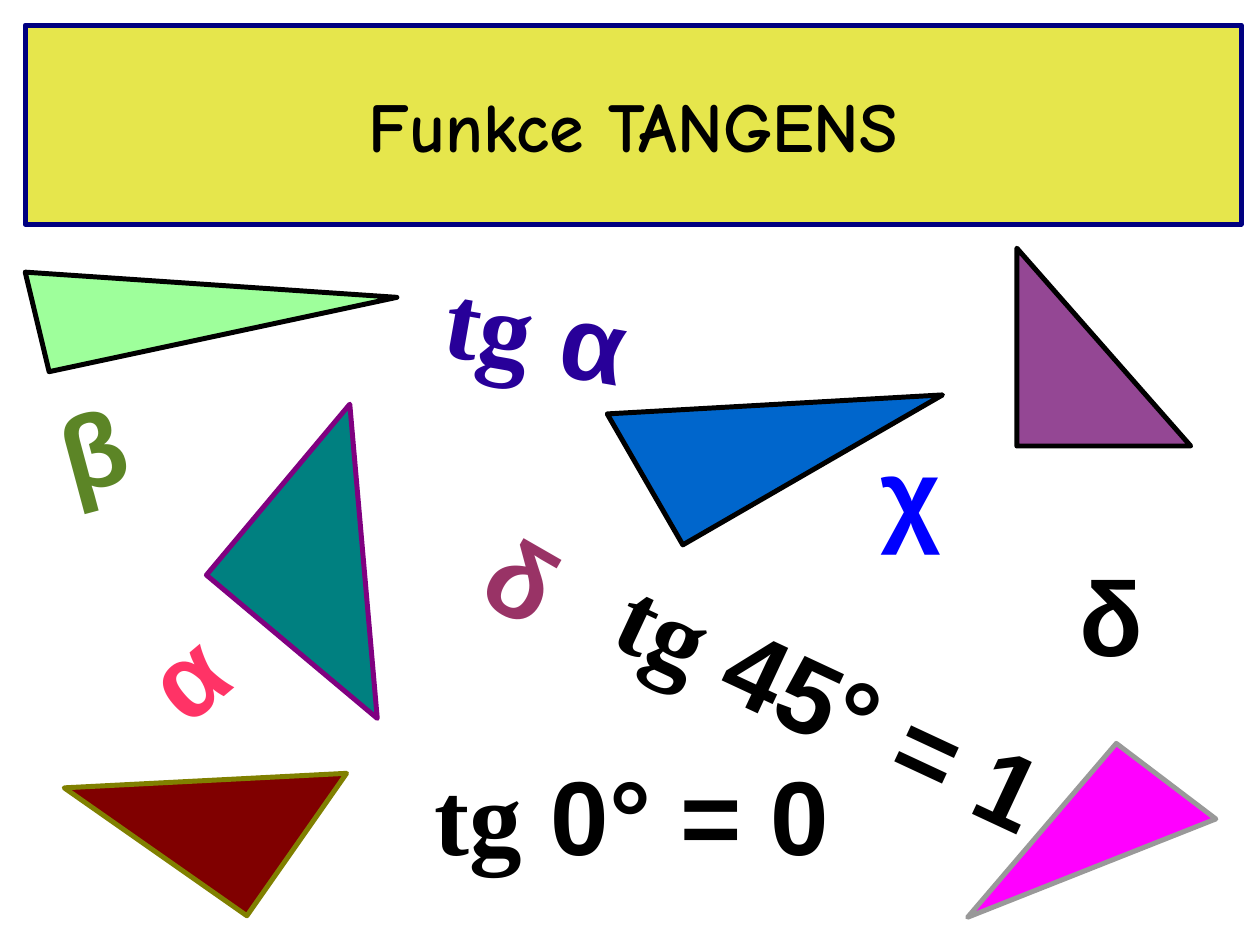
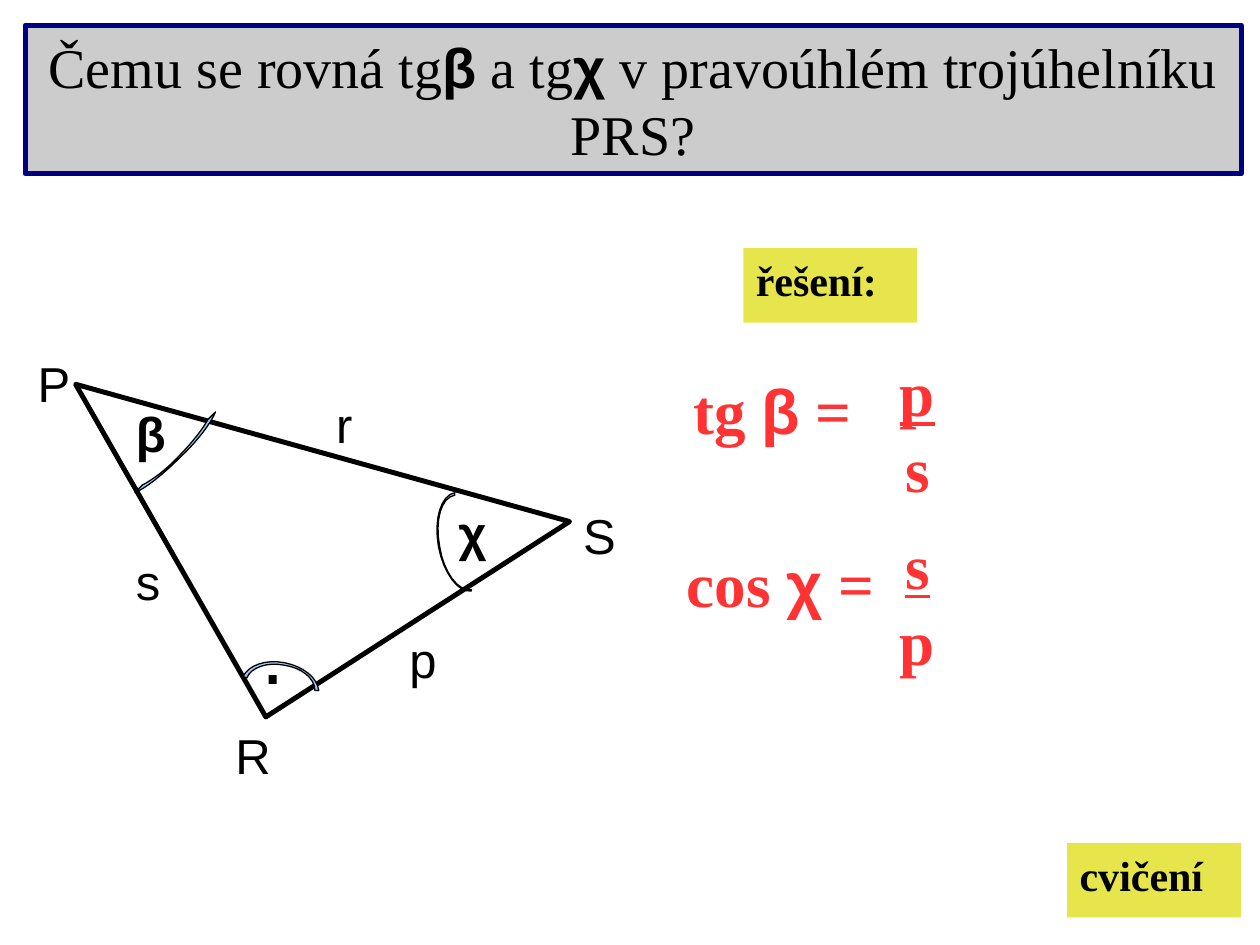
from collections import namedtuple
from dataclasses import dataclass

from lxml.etree import SubElement
from pptx import Presentation as Deck
from pptx.dml.color import RGBColor as Rgb
from pptx.enum.shapes import MSO_SHAPE as Kind
from pptx.enum.text import MSO_ANCHOR as Anchor
from pptx.enum.text import PP_ALIGN as Align
from pptx.oxml.ns import qn
from pptx.util import Pt

PX = 9144
STEPS = 8

Face = namedtuple("Face", "font bold under", defaults=(False, False))


@dataclass(frozen=True)
class Theme:
    black: str = "000000"
    navy: str = "000080"
    yellow: str = "E6E64C"
    gray: str = "CCCCCC"
    red: str = "FF3333"
    sky: str = "99CCFF"
    head: int = 40
    task: int = 32
    sign: int = 60
    dot: int = 48
    label: int = 28
    ratio: int = 36
    tag: int = 24
    thick: float = 2.83
    thin: float = 0.75
    comic: Face = Face("Comic Neue", True)
    plain: Face = Face("Arial")
    greek: Face = Face("Arial", True)
    serif: Face = Face("Times New Roman")
    strong: Face = Face("Times New Roman", True)
    over: Face = Face("Times New Roman", True, True)


T = Theme()


def px(*nums):
    return [round(n * PX) for n in nums]


def paint(shape, fill=None, line=None, width=T.thick):
    shape.shadow.inherit = False
    if fill:
        shape.fill.solid()
        shape.fill.fore_color.rgb = Rgb.from_string(fill)
    else:
        shape.fill.background()
    if line:
        shape.line.color.rgb = Rgb.from_string(line)
        shape.line.width = Pt(width)
        SubElement(shape.line._get_or_add_ln(), qn("a:round"))
    else:
        shape.line.fill.background()


def write(shape, rows, size, color=T.black, mid=False):
    frame = shape.text_frame
    frame.word_wrap = True
    frame.vertical_anchor = Anchor.MIDDLE if mid else Anchor.TOP
    side, edge = px(12, 7) if mid else px(10, 5)
    frame.margin_left = frame.margin_right = side
    frame.margin_top = frame.margin_bottom = edge
    frame.text = "\n".join(row[0][0] for row in rows)
    for para, row in zip(frame.paragraphs, rows):
        para.alignment = Align.CENTER if mid or len(rows) > 1 else Align.LEFT
        for text, _ in row[1:]:
            para.add_run().text = text
        for run, (_, face) in zip(para.runs, row):
            font = run.font
            font.name = face.font
            font.size = Pt(size)
            font.bold = face.bold
            font.underline = face.under
            font.color.rgb = Rgb.from_string(color)


def words(slide, box, rows, size, color=T.black, turn=0, mid=False):
    shape = slide.shapes.add_textbox(*px(*box))
    shape.rotation = turn
    write(shape, rows, size, color, mid)


def panel(slide, box, fill, line=None):
    shape = slide.shapes.add_shape(Kind.RECTANGLE, *px(*box))
    paint(shape, fill, line)
    return shape


def band(slide, high, fill, row, size):
    write(panel(slide, (20, 20, 965, high), fill, T.navy), [row], size, mid=True)


def tag(slide, left, top, text):
    shape = panel(slide, (left, top, 138, 59), T.yellow)
    write(shape, [[(text, T.strong)]], T.tag)


def wedge(slide, box, fill, line=T.black, turn=0):
    shape = slide.shapes.add_shape(Kind.RIGHT_TRIANGLE, *px(*box))
    shape.rotation = turn
    paint(shape, fill, line)


def shape_of(slide, spots, fill=None, line=T.black, width=T.thick):
    first, *rest = [px(*spot) for spot in spots]
    pen = slide.shapes.build_freeform(*first, scale=1.0)
    pen.add_line_segments(rest, close=True)
    paint(pen.convert_to_shape(), fill, line, width)


def bend(a, b, c, d):
    for step in range(1, STEPS + 1):
        t = step / STEPS
        u = 1 - t
        mix = (u**3, 3 * u * u * t, 3 * u * t * t, t**3)
        yield tuple(sum(m * p for m, p in zip(mix, ax)) for ax in zip(a, b, c, d))


def edge_of(knots):
    spots = [knots[0]]
    for i in range(0, len(knots) - 1, 3):
        spots += bend(*knots[i:i + 4])
    return spots


def arc(slide, out, back):
    shape_of(slide, edge_of(out) + edge_of(back), T.sky, T.black, T.thin)


def cover(slide):
    band(slide, 158, T.yellow, [("Funkce TANGENS", T.comic)], T.head)
    wedge(slide, (200, 357, 177, 177), "008080", "800080", 40)
    wedge(slide, (496, 261, 238, 120), "0066CC", turn=330)
    wedge(slide, (94, 531, 138, 177), "800000", "808000", 305)
    for left, top, wide, text, color, turn in (
        (343, 215, 256, " α", "280099", 10),
        (467, 509, 413, " 45° = 1", T.black, 25),
        (335, 591, 453, " 0° = 0", T.black, 0),
    ):
        row = [("tg", T.strong), (text, T.greek)]
        words(slide, (left, top, wide, 118), [row], T.sign, color, turn)
    for left, top, text, color, turn in (
        (111, 471, "α", "FF3366", 320),
        (39, 296, "β", "5C8526", 345),
        (689, 335, "χ", "0000FF", 0),
        (847, 433, "δ", T.black, 0),
        (377, 410, "δ", "993366", 30),
    ):
        row = [(text, T.greek)]
        words(slide, (left, top, 98, 118), [row], T.sign, color, turn)
    wedge(slide, (807, 197, 138, 157), "944794")
    shape_of(slide, [(768, 728), (886, 590), (965, 650)], "FF00FF", "999999")
    shape_of(slide, [(315, 236), (39, 295), (20, 216)], "9EFF9B")


def task(slide):
    shape_of(slide, [(60, 305), (211, 569), (452, 414)])
    words(slide, (198, 472, 40, 90), [[(".", T.plain)]], T.dot)
    for left, top, text, face in (
        (177, 571, "R", T.plain),
        (453, 396, "S", T.plain),
        (20, 276, "P", T.plain),
        (315, 495, "p", T.plain),
        (257, 308, "r", T.plain),
        (98, 433, "s", T.plain),
        (354, 394, "χ", T.greek),
        (98, 315, "β", T.greek),
    ):
        words(slide, (left, top, 59, 57), [[(text, face)]], T.label)
    arc(slide,
        [(165, 333), (162, 339), (153, 351), (142, 362),
         (131, 374), (119, 382), (113, 385)],
        [(107, 391), (115, 388), (129, 377), (143, 363),
         (157, 350), (168, 335), (171, 327)])
    arc(slide,
        [(196, 538), (199, 530), (212, 525), (226, 528),
         (239, 530), (250, 538), (250, 548)],
        [(253, 548), (252, 538), (241, 529), (226, 526),
         (211, 523), (197, 528), (193, 537)])
    arc(slide,
        [(374, 468), (364, 470), (352, 454), (349, 434),
         (345, 413), (350, 395), (361, 393)],
        [(361, 391), (350, 393), (344, 412), (348, 434),
         (352, 455), (364, 471), (374, 469)])
    band(slide, 118, T.gray, [
        ("Čemu se rovná tg", T.serif), ("β", T.greek), (" a tg", T.serif),
        ("χ", T.greek), (" v pravoúhlém trojúhelníku PRS?", T.serif),
    ], T.task)
    for top, name, angle, upper, lower in (
        (276, "tg ", "β", "p", "s"),
        (413, "cos ", "χ", "s", "p"),
    ):
        row = [(name, T.strong), (angle, T.greek), (" = ", T.strong)]
        words(slide, (531, top, 177, 98), [row], T.ratio, T.red, mid=True)
        ratio = [[(upper, T.over)], [(lower, T.strong)]]
        words(slide, (669, top, 118, 118), ratio, T.ratio, T.red)
    tag(slide, 847, 669, "cvičení")
    tag(slide, 590, 197, "řešení:")


def main():
    deck = Deck()
    deck.slide_width, deck.slide_height = px(1000, 750)
    for draw in (cover, task):
        draw(deck.slides.add_slide(deck.slide_layouts[6]))
    deck.save("out.pptx")


if __name__ == "__main__":
    main()
